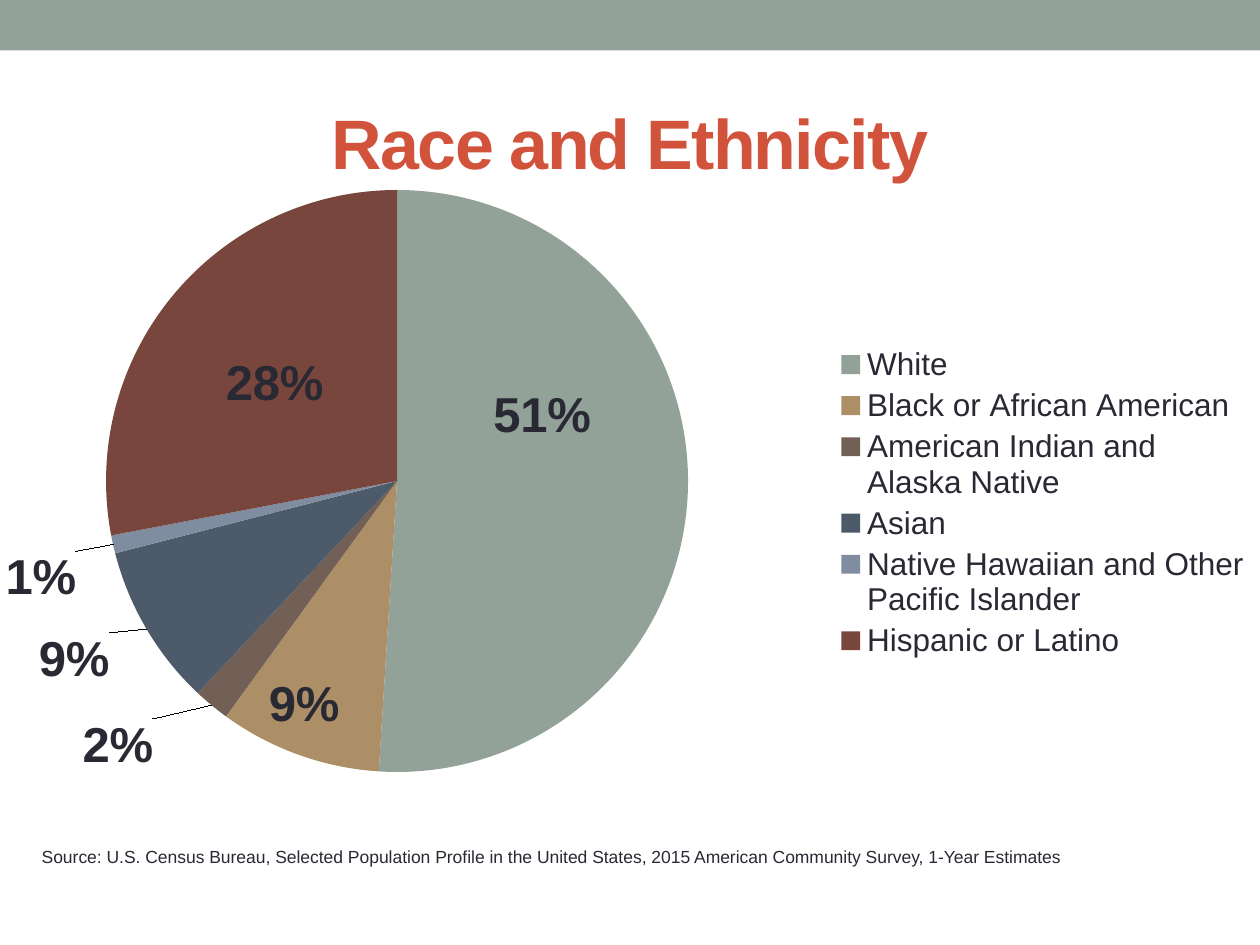
from dataclasses import dataclass

from lxml import etree
from pptx import Presentation
from pptx.chart.data import CategoryChartData
from pptx.dml.color import RGBColor
from pptx.enum.chart import XL_CHART_TYPE, XL_LABEL_POSITION, XL_LEGEND_POSITION
from pptx.enum.shapes import MSO_SHAPE
from pptx.enum.text import MSO_ANCHOR, PP_ALIGN
from pptx.oxml.ns import qn
from pptx.util import Pt

PIE = XL_CHART_TYPE.PIE
BEST_FIT = XL_LABEL_POSITION.BEST_FIT
LEGEND_RIGHT = XL_LEGEND_POSITION.RIGHT
RECTANGLE = MSO_SHAPE.RECTANGLE
TOP, MIDDLE = MSO_ANCHOR.TOP, MSO_ANCHOR.MIDDLE
LEFT, CENTER = PP_ALIGN.LEFT, PP_ALIGN.CENTER


@dataclass(frozen=True)
class Theme:
    font: str = "Arial"
    band: str = "93A299"
    title: str = "D2533C"
    text: str = "292934"
    title_size: int = 40
    label_size: int = 28
    legend_size: int = 18
    source_size: int = 10


@dataclass(frozen=True)
class Box:
    left: float
    top: float
    width: float
    height: float

    def points(self) -> tuple:
        return Pt(self.left), Pt(self.top), Pt(self.width), Pt(self.height)


@dataclass(frozen=True)
class Group:
    name: str
    share: int
    color: str
    label_shift_x: float
    label_shift_y: float


@dataclass(frozen=True)
class Caption:
    text: str
    box: Box
    size: int
    color: str
    bold: bool = False
    alignment: PP_ALIGN = LEFT
    anchor: MSO_ANCHOR = TOP
    spacing: int = 0


THEME = Theme()
CHART_BOX = Box(0, 96, 720, 384)
PIE_BOX = Box(60.6, 108.6, 332.6, 332.6)
LEGEND_BOX = Box(478, 195, 235.5, 184.5)
GROUPS = [
    Group("White", 51, "93A299", -115.5, -42.3),
    Group("Black or African American", 9, "AD8F67", 24.6, -48),
    Group("American Indian and Alaska Native", 2, "726056", -30.9, 4.6),
    Group("Asian", 9, "4C5A6A", -17.7, 0),
    Group("Native Hawaiian and Other Pacific Islander", 1, "808DA0", -17.2, 3),
    Group("Hispanic or Latino", 28, "79463D", 89.1, 68.6),
]
CAPTIONS = [
    Caption("Race and Ethnicity", Box(36, 41.75, 648, 78), THEME.title_size,
            THEME.title, True, CENTER, MIDDLE, -100),
    Caption("Source: U.S. Census Bureau, Selected Population Profile in the United "
            "States, 2015 American Community Survey, 1-Year Estimates",
            Box(16.75, 480, 654, 42), THEME.source_size, THEME.text),
]


def style_font(font, size: int, color: str, bold: bool = False) -> None:
    font.name = THEME.font
    font.size = Pt(size)
    font.bold = bold
    font.color.rgb = RGBColor.from_string(color)


def add_band(slide) -> None:
    band = slide.shapes.add_shape(RECTANGLE, *Box(0, 0, 720, 28.8).points())
    band.shadow.inherit = False
    band.fill.solid()
    band.fill.fore_color.rgb = RGBColor.from_string(THEME.band)
    band.line.fill.background()


def add_caption(slide, caption: Caption) -> None:
    text_frame = slide.shapes.add_textbox(*caption.box.points()).text_frame
    text_frame.word_wrap = True
    text_frame.vertical_anchor = caption.anchor
    text_frame.text = caption.text
    paragraph = text_frame.paragraphs[0]
    paragraph.alignment = caption.alignment
    run = paragraph.runs[0]
    style_font(run.font, caption.size, caption.color, caption.bold)
    if caption.spacing:
        run._r.get_or_add_rPr().set("spc", str(caption.spacing))


def set_layout(parent, position: int, **settings) -> None:
    for existing in parent.findall(qn("c:layout")):
        parent.remove(existing)
    layout = etree.Element(qn("c:layout"))
    manual = etree.SubElement(layout, qn("c:manualLayout"))
    for name, value in settings.items():
        etree.SubElement(manual, qn(f"c:{name}")).set("val", str(value))
    parent.insert(position, layout)


def place_in_chart(parent, position: int, box: Box, **settings) -> None:
    set_layout(parent, position, **settings, xMode="edge", yMode="edge",
               x=(box.left - CHART_BOX.left) / CHART_BOX.width,
               y=(box.top - CHART_BOX.top) / CHART_BOX.height,
               w=box.width / CHART_BOX.width, h=box.height / CHART_BOX.height)


def style_labels(chart, series) -> None:
    labels = series.data_labels
    labels.show_percentage = True
    labels.show_value = False
    labels.position = BEST_FIT
    style_font(labels.font, THEME.label_size, THEME.text, True)
    for index, group in enumerate(GROUPS):
        point = series.points[index]
        point.format.fill.solid()
        point.format.fill.fore_color.rgb = RGBColor.from_string(group.color)
        style_font(point.data_label.font, THEME.label_size, THEME.text, True)
        point.data_label.position = BEST_FIT
    for label, group in zip(chart.element.xpath(".//c:dLbl"), GROUPS):
        label.find(qn("c:showVal")).set("val", "0")
        label.find(qn("c:showPercent")).set("val", "1")
        set_layout(label, 1, x=group.label_shift_x / CHART_BOX.width,
                   y=group.label_shift_y / CHART_BOX.height)


def add_pie(slide) -> None:
    data = CategoryChartData()
    data.categories = [group.name for group in GROUPS]
    data.add_series("Series 1", [group.share for group in GROUPS])
    chart = slide.shapes.add_chart(PIE, *CHART_BOX.points(), data).chart
    chart.has_title = False
    style_font(chart.font, THEME.legend_size, THEME.text)
    chart.has_legend = True
    chart.legend.position = LEGEND_RIGHT
    chart.legend.include_in_layout = False
    style_font(chart.legend.font, THEME.legend_size, THEME.text)
    plot = chart.plots[0]
    plot.vary_by_categories = True
    style_labels(chart, plot.series[0])
    plot_area = chart.element.xpath(".//c:plotArea")[0]
    legend = chart.element.xpath(".//c:legend")[0]
    place_in_chart(plot_area, 0, PIE_BOX, layoutTarget="inner")
    place_in_chart(legend, 1, LEGEND_BOX)


def main() -> None:
    presentation = Presentation()
    presentation.slide_width, presentation.slide_height = Pt(720), Pt(540)
    slide = presentation.slides.add_slide(presentation.slide_layouts[6])
    title, source = CAPTIONS
    add_band(slide)
    add_caption(slide, title)
    add_pie(slide)
    add_caption(slide, source)
    presentation.save("out.pptx")


if __name__ == "__main__":
    main()
